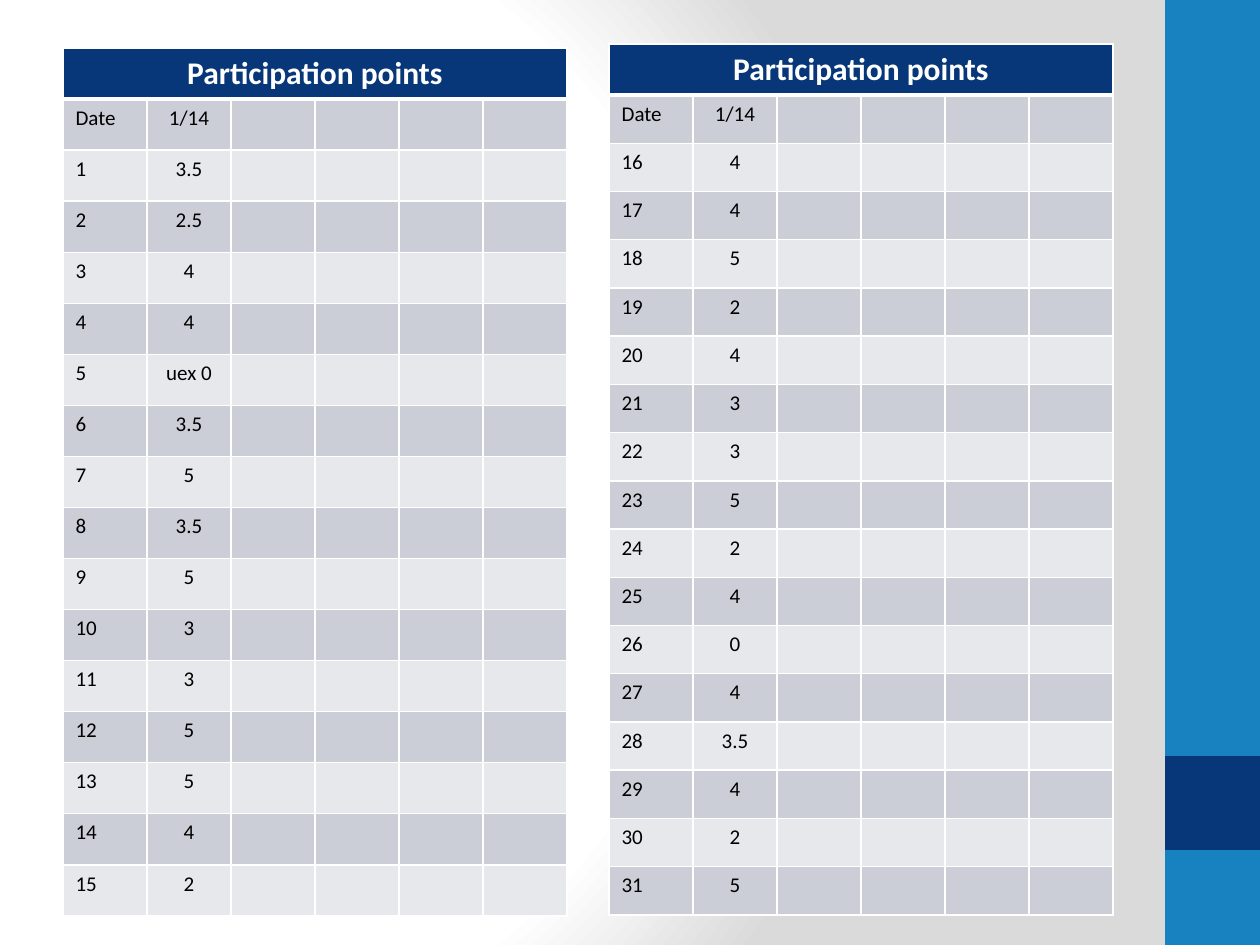
from pptx import Presentation, oxml
from pptx import util as u
from pptx.dml import color
from pptx.enum import shapes, text
from pptx.oxml import ns

UNIT = 914400 / 126
NAVY, BLUE, WHITE, BLACK = "073779", "1782BF", "FFFFFF", "000000"
BANDS = ["CCCED7", "E7E8EC"]
HEAD = {"name": "Calibri", "size": u.Pt(18), "bold": True}
BODY = {"name": "Calibri", "size": u.Pt(12), "bold": False}
COLS = 6
LEFT = ["3.5", "2.5", "4", "4", "uex 0", "3.5", "5", "3.5",
        "5", "3", "3", "5", "5", "4", "2"]
RIGHT = ["4", "4", "5", "2", "4", "3", "3", "5",
         "2", "4", "0", "4", "3.5", "4", "2", "5"]


def px(n):
    return u.Emu(round(n * UNIT))


def rgb(code):
    return color.RGBColor.from_string(code)


def node(tag, body="", attrs=""):
    return oxml.parse_xml(f"<{tag} {ns.nsdecls('a', 'p')} {attrs}>{body}</{tag}>")


def paint(item, code):
    item.fill.solid()
    item.fill.fore_color.rgb = rgb(code)


def backdrop(slide):
    stops = "".join(
        f'<a:gs pos="{pos}000"><a:srgbClr val="{code}"/></a:gs>'
        for pos, code in [(0, WHITE), (75, WHITE), (100, "DADADA")])
    grad = (f'<a:gradFill rotWithShape="1"><a:gsLst>{stops}</a:gsLst>'
            '<a:path path="circle"><a:fillToRect l="20000" t="50000" '
            'r="100000" b="50000"/></a:path></a:gradFill>')
    body = f"<p:bgPr>{grad}<a:effectLst/></p:bgPr>"
    slide.element.cSld.insert(0, node("p:bg", body))


def block(slide, box, code):
    shape = slide.shapes.add_shape(shapes.MSO_SHAPE.RECTANGLE, *map(px, box))
    shape.shadow.inherit = False
    paint(shape, code)
    shape.line.fill.background()


def border(cell, top, low):
    props = cell._tc.get_or_add_tcPr()
    fill = f'<a:solidFill><a:srgbClr val="{WHITE}"/></a:solidFill>'
    for side, width in zip("LRTB", [1, 1, top, low]):
        props.append(node(f"a:ln{side}", fill, f'w="{u.Pt(width)}"'))


def write(cell, words, form, ink, mid):
    para = cell.text_frame.paragraphs[0]
    if not words:
        para._p.append(node("a:endParaRPr", attrs=f'sz="{form["size"].pt * 100:.0f}"'))
        return
    if mid:
        para.alignment = text.PP_ALIGN.CENTER
    run = para.add_run()
    run.text = words
    for key, value in form.items():
        setattr(run.font, key, value)
    run.font.color.rgb = rgb(ink)


def scores(slide, place, first, marks, head, total):
    rows = [["Participation points"], ["Date", "1/14"]]
    rows += [[str(num), mark] for num, mark in enumerate(marks, first)]
    frame = slide.shapes.add_table(
        len(rows), COLS, *map(px, place), px(84 * COLS), px(total))
    table = frame.table
    table.first_row = table.horz_banding = False
    for col in table.columns:
        col.width = px(84)
    step = (total - head) / (len(rows) - 1)
    for r, row in enumerate(rows):
        table.rows[r].height = px(step if r else head)
        form, ink = (BODY, BLACK) if r else (HEAD, WHITE)
        for c in range(COLS):
            cell = table.cell(r, c)
            border(cell, 3 if r == 1 else 1, 1 if r else 3)
            paint(cell, BANDS[(r - 1) % 2] if r else NAVY)
            write(cell, row[c] if c < len(row) else "", form, ink, c or not r)
    table.cell(0, 0).merge(table.cell(0, COLS - 1))


def main():
    deck = Presentation()
    deck.slide_width, deck.slide_height = px(1260), px(945)
    slide = deck.slides.add_slide(deck.slide_layouts[6])
    backdrop(slide)
    block(slide, (1165, 0, 95, 945), BLUE)
    block(slide, (1165, 756, 95, 94), NAVY)
    scores(slide, (63, 48), 1, LEFT, 51, 868)
    scores(slide, (609, 44), 16, RIGHT, 51, 871)
    deck.save("out.pptx")


if __name__ == "__main__":
    main()
